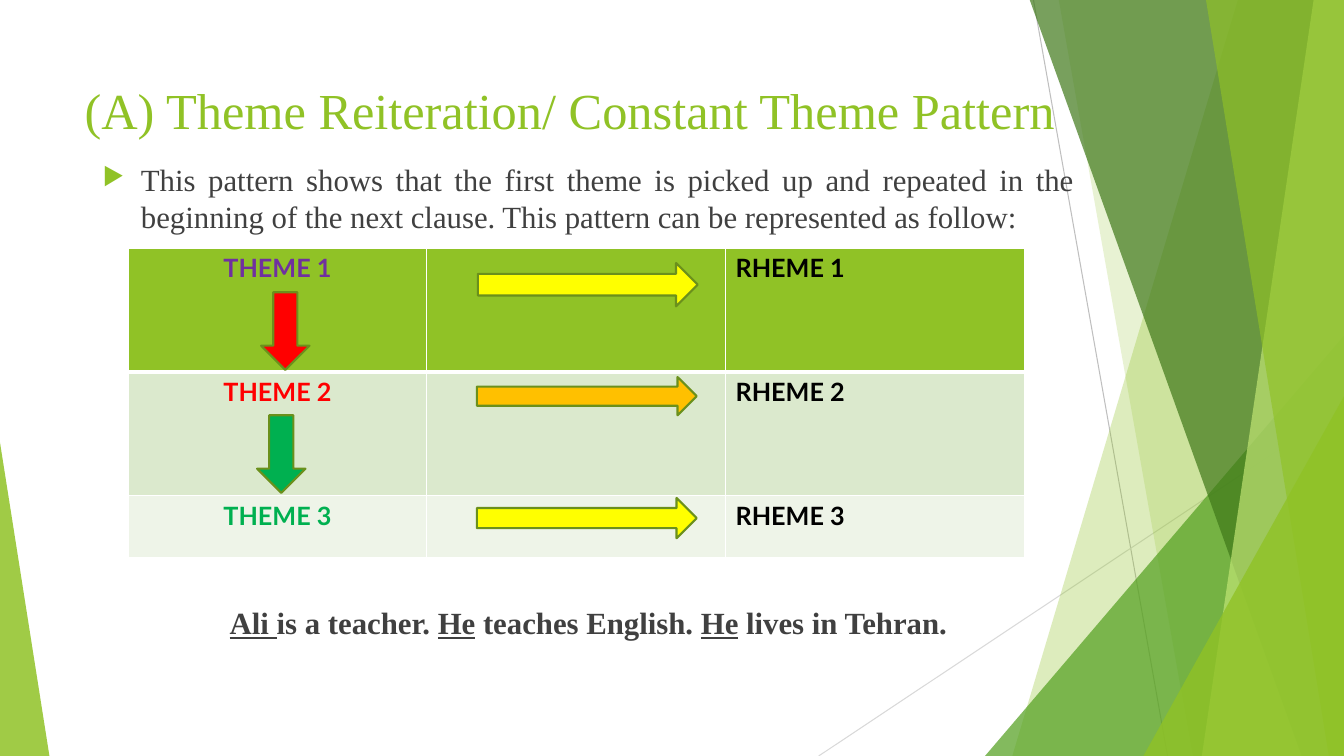
from dataclasses import dataclass

import pptx
import pptx.dml.color
import pptx.enum.shapes
import pptx.enum.text
import pptx.oxml
import pptx.oxml.ns
import pptx.util
from pptx.util import Inches

SHAPE = pptx.enum.shapes.MSO_SHAPE
ALIGN = pptx.enum.text.PP_ALIGN
ANCHOR = pptx.enum.text.MSO_ANCHOR
qn = pptx.oxml.ns.qn
NS = pptx.oxml.ns.nsdecls("a")
WIDTH, HEIGHT = 13.33, 7.5
SERIF = "Times New Roman"
GREEN, GREY, BLACK = "90C226", "404040", "000000"


@dataclass
class Ray:
    start: tuple[float, float]
    end: tuple[float, float]
    color: str


@dataclass
class Facet:
    top_x: float
    bottom_x: float
    color: str
    opacity: int


@dataclass
class Wedge:
    left: float
    top: float
    width: float
    apex: float
    color: str
    opacity: int


@dataclass
class Arrow:
    kind: SHAPE
    left: float
    top: float
    width: float
    height: float
    color: str


@dataclass
class Clause:
    theme: str
    theme_color: str
    rheme: str
    fill: str
    height: float
    top_border: float
    bottom_border: float


@dataclass
class Words:
    text: str
    size: float
    color: str
    font: str = SERIF
    bold: bool = False
    underline: bool = False


RAYS = [
    Ray((10.25, 0), (11.58, HEIGHT), "BFBFBF"),
    Ray((WIDTH, 4.03), (8.12, HEIGHT), "D9D9D9"),
]
BACKDROP = [
    Facet(12.28, 10.04, GREEN, 30),
    Facet(10.5, 11.83, GREEN, 20),
    Wedge(9.77, 3.33, 3.56, 1, "54A021", 72),
    Facet(10.21, 12.91, "3F7819", 70),
    Facet(13.03, 11.92, "C0E474", 70),
    Facet(11.96, 13.18, GREEN, 65),
    Wedge(11.34, 3.93, 1.99, 1, GREEN, 80),
    Wedge(0, 4.39, 0.49, 0, GREEN, 85),
]
CLAUSES = [
    Clause("THEME 1", "7030A0", "RHEME 1", GREEN, 1.23, 1, 3),
    Clause("THEME 2", "FF0000", "RHEME 2", "DBE9CD", 1.23, 3, 1),
    Clause("THEME 3", "00B050", "RHEME 3", "EEF4E8", 0.61, 1, 1),
]
ARROWS = [
    Arrow(SHAPE.DOWN_ARROW, 2.59, 2.9, 0.48, 0.77, "FF0000"),
    Arrow(SHAPE.DOWN_ARROW, 2.55, 4.12, 0.48, 0.77, "00B050"),
    Arrow(SHAPE.RIGHT_ARROW, 4.74, 2.61, 2.18, 0.43, "FFFF00"),
    Arrow(SHAPE.RIGHT_ARROW, 4.73, 4.94, 2.18, 0.4, "FFFF00"),
    Arrow(SHAPE.RIGHT_ARROW, 4.73, 3.74, 2.18, 0.38, "FFC000"),
]
TITLE = "(A) Theme Reiteration/ Constant Theme Pattern"
EXPLANATION = (
    "This pattern shows that the first theme is picked up and repeated in the "
    "beginning of the next clause. This pattern can be represented as follow:"
)
EXAMPLE = [
    ("Ali ", True), ("is a teacher. ", False), ("He", True),
    (" teaches English. ", False), ("He", True), (" lives in Tehran.", False),
]


def rgb(color: str) -> pptx.dml.color.RGBColor:
    return pptx.dml.color.RGBColor.from_string(color)


def paint(shape, color: str, opacity: int = 100) -> None:
    shape.shadow.inherit = False
    shape.fill.solid()
    shape.fill.fore_color.rgb = rgb(color)
    if opacity < 100:
        tint = shape._element.spPr.find(qn("a:solidFill")).find(qn("a:srgbClr"))
        tint.append(pptx.oxml.parse_xml(f'<a:alpha {NS} val="{opacity * 1000}"/>'))


def draw_ray(slide, ray: Ray) -> None:
    points = [Inches(value) for value in ray.start + ray.end]
    line = slide.shapes.add_connector(pptx.enum.shapes.MSO_CONNECTOR.STRAIGHT, *points)
    line.line.color.rgb = rgb(ray.color)
    line.line.width = pptx.util.Pt(0.75)
    line._element.spPr.append(pptx.oxml.parse_xml(f"<a:effectLst {NS}/>"))


def draw_facet(slide, facet: Facet) -> None:
    outline = slide.shapes.build_freeform(Inches(facet.top_x), Inches(-0.01), scale=1.0)
    corners = [(WIDTH, -0.01), (WIDTH, HEIGHT), (facet.bottom_x, HEIGHT)]
    outline.add_line_segments([(Inches(x), Inches(y)) for x, y in corners], close=True)
    shape = outline.convert_to_shape()
    paint(shape, facet.color, facet.opacity)
    shape.line.fill.background()


def draw_wedge(slide, wedge: Wedge) -> None:
    shape = slide.shapes.add_shape(
        SHAPE.ISOSCELES_TRIANGLE, Inches(wedge.left), Inches(wedge.top),
        Inches(wedge.width), Inches(HEIGHT - wedge.top))
    shape.adjustments[0] = wedge.apex
    paint(shape, wedge.color, wedge.opacity)
    shape.line.fill.background()


def draw_arrow(slide, arrow: Arrow) -> None:
    shape = slide.shapes.add_shape(
        arrow.kind, Inches(arrow.left), Inches(arrow.top),
        Inches(arrow.width), Inches(arrow.height))
    paint(shape, arrow.color)
    shape.line.color.rgb = rgb("6B901C")
    shape.line.width = pptx.util.Pt(1.5)


def write(paragraph, words: list[Words], align: ALIGN) -> None:
    paragraph.alignment = align
    for part in words:
        run = paragraph.add_run()
        run.text = part.text
        run.font.size = pptx.util.Pt(part.size)
        run.font.name = part.font
        run.font.bold = part.bold
        run.font.underline = part.underline
        run.font.color.rgb = rgb(part.color)


def add_text(slide, box: tuple[float, ...], words: list[Words], align: ALIGN,
             anchor: ANCHOR = ANCHOR.TOP, bullet: bool = False) -> None:
    frame = slide.shapes.add_textbox(*[Inches(value) for value in box]).text_frame
    frame.word_wrap = True
    frame.vertical_anchor = anchor
    paragraph = frame.paragraphs[0]
    if bullet:
        properties = paragraph._p.get_or_add_pPr()
        properties.set("marL", str(Inches(0.38)))
        properties.set("indent", str(Inches(-0.38)))
        for mark in (f'<a:buClr {NS}><a:srgbClr val="{GREEN}"/></a:buClr>',
                     f'<a:buSzPct {NS} val="80000"/>', f'<a:buChar {NS} char="▶"/>'):
            properties.append(pptx.oxml.parse_xml(mark))
    write(paragraph, words, align)


def add_clauses(slide, clauses: list[Clause]) -> None:
    table = slide.shapes.add_table(
        len(clauses), 3, Inches(1.27), Inches(2.46), Inches(8.89), Inches(3.07)).table
    table.first_row = table.horz_banding = False
    for column in table.columns:
        column.width = Inches(8.89 / 3)
    for row, clause in zip(table.rows, clauses):
        row.height = Inches(clause.height)
        borders = {"L": 1, "R": 1, "T": clause.top_border, "B": clause.bottom_border}
        for cell in row.cells:
            for side, width in borders.items():
                cell._tc.get_or_add_tcPr().append(pptx.oxml.parse_xml(
                    f'<a:ln{side} {NS} w="{pptx.util.Pt(width)}"><a:solidFill>'
                    f'<a:srgbClr val="FFFFFF"/></a:solidFill></a:ln{side}>'))
            cell.fill.solid()
            cell.fill.fore_color.rgb = rgb(clause.fill)
        theme = Words(clause.theme, 18, clause.theme_color, "Lato", bold=True)
        rheme = Words(clause.rheme, 18, BLACK, "Lato", bold=True)
        write(row.cells[0].text_frame.paragraphs[0], [theme], ALIGN.CENTER)
        write(row.cells[2].text_frame.paragraphs[0], [rheme], ALIGN.LEFT)


def main() -> None:
    deck = pptx.Presentation()
    deck.slide_width, deck.slide_height = Inches(WIDTH), Inches(HEIGHT)
    slide = deck.slides.add_slide(deck.slide_layouts[6])
    for ray in RAYS:
        draw_ray(slide, ray)
    for part in BACKDROP:
        if isinstance(part, Facet):
            draw_facet(slide, part)
        else:
            draw_wedge(slide, part)
    add_text(slide, (0.74, 0.67, 10.01, 0.82), [Words(TITLE, 36, GREEN)],
             ALIGN.LEFT, ANCHOR.MIDDLE)
    add_text(slide, (0.92, 1.55, 9.83, 0.85), [Words(EXPLANATION, 22, GREY)],
             ALIGN.JUSTIFY, bullet=True)
    example = [Words(text, 22, GREY, bold=True, underline=marked) for text, marked in EXAMPLE]
    add_text(slide, (0.92, 5.94, 9.83, 0.5), example, ALIGN.CENTER)
    add_clauses(slide, CLAUSES)
    for arrow in ARROWS:
        draw_arrow(slide, arrow)
    deck.save("out.pptx")


if __name__ == "__main__":
    main()
